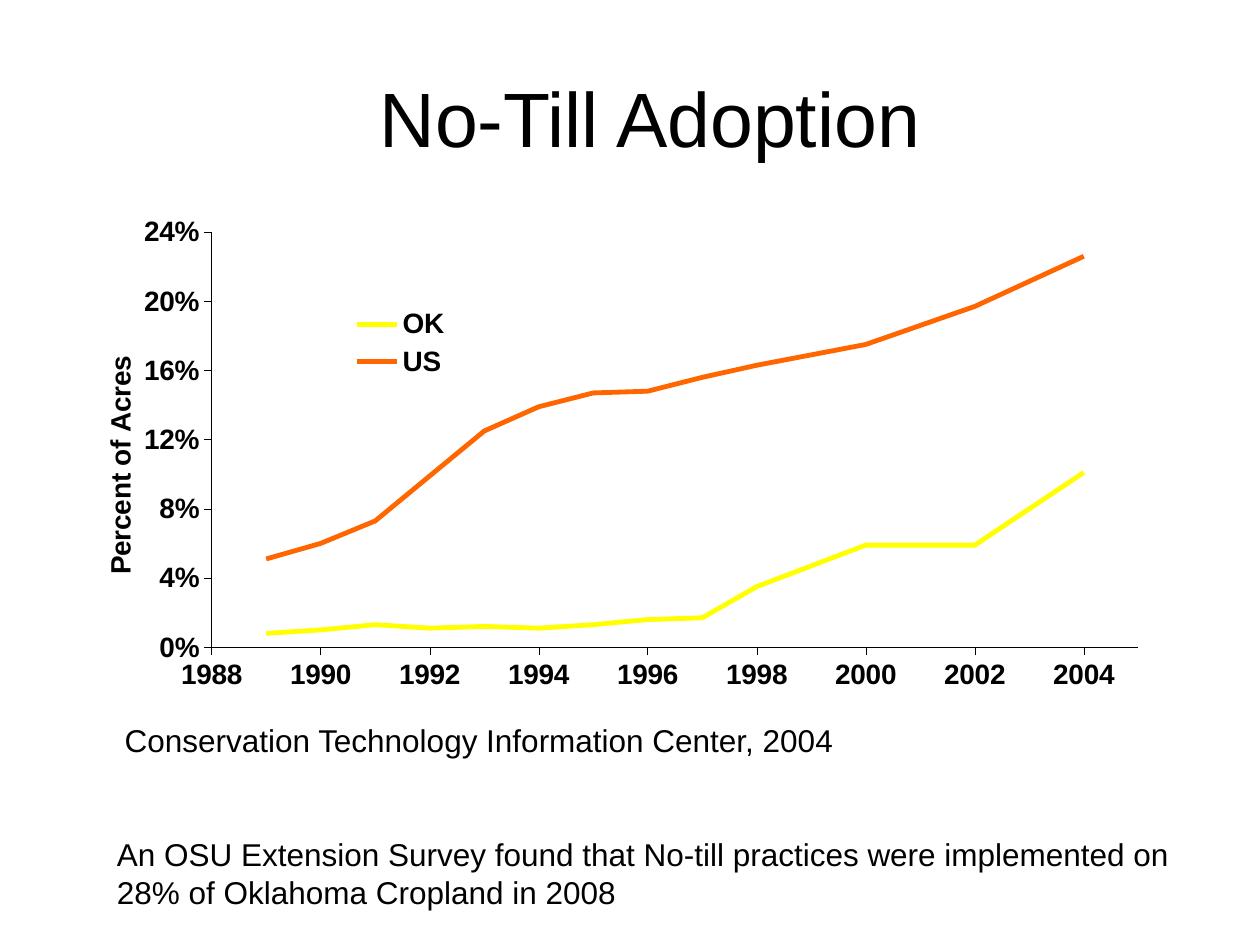
from lxml.etree import SubElement
from pptx import Presentation
from pptx.chart.data import XyChartData
from pptx.dml.color import RGBColor
from pptx.enum.chart import XL_CHART_TYPE as Kind, XL_LEGEND_POSITION as Side
from pptx.enum.chart import XL_TICK_LABEL_POSITION as Label, XL_TICK_MARK as Tick
from pptx.enum.text import MSO_ANCHOR as Anchor, PP_ALIGN as Align
from pptx.oxml.ns import qn
from pptx.util import Inches, Pt

BLACK = RGBColor(0, 0, 0)
YELLOW = RGBColor(0xFF, 0xFF, 0)
ORANGE = RGBColor(0xFF, 0x66, 0)
FONT = "Arial"
YEARS = [*range(1989, 1999), 2000, 2002, 2004]
LINES = [
    ("OK", YELLOW, [0.008, 0.01, 0.013, 0.011, 0.012, 0.011, 0.013,
                    0.016, 0.017, 0.035, 0.059, 0.059, 0.101]),
    ("US", ORANGE, [0.051, 0.06, 0.073, 0.099, 0.125, 0.139, 0.147,
                    0.148, 0.156, 0.163, 0.175, 0.197, 0.226]),
]


def style(font, size, bold=False):
    """Give a font the slide's face and colour."""
    font.name, font.size, font.bold = FONT, Pt(size), bold
    font.color.rgb = BLACK


def add_text(slide, box, text, size, align=Align.LEFT, anchor=Anchor.TOP, wrap=True):
    """Add a text box with one run."""
    frame = slide.shapes.add_textbox(*map(Inches, box)).text_frame
    frame.word_wrap, frame.vertical_anchor = wrap, anchor
    para = frame.paragraphs[0]
    para.alignment = align
    run = para.add_run()
    run.text = text
    style(run.font, size)


def place(node, index, inner=False, **spots):
    """Set a manual layout on a chart part, in fractions of the chart."""
    for old in node.findall(qn("c:layout")):
        node.remove(old)
    layout = node.makeelement(qn("c:layout"))
    node.insert(index, layout)
    manual = SubElement(layout, qn("c:manualLayout"))
    if inner:
        SubElement(manual, qn("c:layoutTarget")).set("val", "inner")
    for key in ("x", "y"):
        SubElement(manual, qn(f"c:{key}Mode")).set("val", "edge")
    for key, value in spots.items():
        SubElement(manual, qn(f"c:{key}")).set("val", str(value))


def set_axis(axis, low, high, step, form):
    """Set the scale, ticks and line of an axis."""
    axis.minimum_scale, axis.maximum_scale, axis.major_unit = low, high, step
    axis.has_major_gridlines = False
    axis.major_tick_mark, axis.minor_tick_mark = Tick.OUTSIDE, Tick.NONE
    axis.tick_label_position = Label.NEXT_TO_AXIS
    labels = axis.tick_labels
    labels.number_format, labels.number_format_is_linked = form, False
    style(labels.font, 16, True)
    axis.format.line.color.rgb = BLACK
    axis.format.line.width = Pt(0.25)


def add_name(axis, text):
    """Add an upright title to the value axis."""
    title = axis.axis_title
    para = title.text_frame.paragraphs[0]
    run = para.add_run()
    run.text = text
    style(run.font, 16, True)
    body = next(title._element.iter(qn("a:bodyPr")))
    body.set("rot", "-5400000")
    body.set("vert", "horz")
    place(title._element, 1, x=0.03, y=0.3)


def add_lines(slide, box):
    """Add the adoption chart."""
    data = XyChartData()
    for name, _, shares in LINES:
        points = data.add_series(name)
        for year, share in zip(YEARS, shares):
            points.add_data_point(year, share)
    kind = Kind.XY_SCATTER_LINES_NO_MARKERS
    chart = slide.shapes.add_chart(kind, *map(Inches, box), data).chart
    style(chart.font, 16, True)
    chart.has_title = False
    for series, (_, color, _) in zip(chart.plots[0].series, LINES):
        series.smooth = False
        series.format.line.color.rgb = color
        series.format.line.width = Pt(2.75)
    set_axis(chart.category_axis, 1988, 2005, 2, "General")
    set_axis(chart.value_axis, 0, 0.24, 0.04, "0%")
    add_name(chart.value_axis, "Percent of Acres")
    chart.has_legend = True
    legend = chart.legend
    legend.position, legend.include_in_layout = Side.RIGHT, False
    style(legend.font, 16, True)
    place(legend._element, 1, x=0.25, y=0.21, w=0.09, h=0.15)
    area = next(chart._chartSpace.iter(qn("c:plotArea")))
    place(area, 0, inner=True, x=0.13, y=0.08, w=0.81, h=0.77)


def main():
    """Build and save the slide."""
    deck = Presentation()
    deck.slide_width, deck.slide_height = Inches(10), Inches(7.5)
    slide = deck.slides.add_slide(deck.slide_layouts[6])
    add_text(slide, (0.66, 0.3, 9, 1.25), "No-Till Adoption", 44,
             Align.CENTER, Anchor.MIDDLE)
    add_lines(slide, (0.5, 1.5, 9.08, 4.28))
    add_text(slide, (0.89, 5.67, 5.88, 0.4),
             "Conservation Technology Information Center, 2004", 18, wrap=False)
    add_text(slide, (0.83, 6.58, 8.58, 0.71),
             "An OSU Extension Survey found that No-till practices were "
             "implemented on 28% of Oklahoma Cropland in 2008", 18)
    deck.save("out.pptx")


if __name__ == "__main__":
    main()
